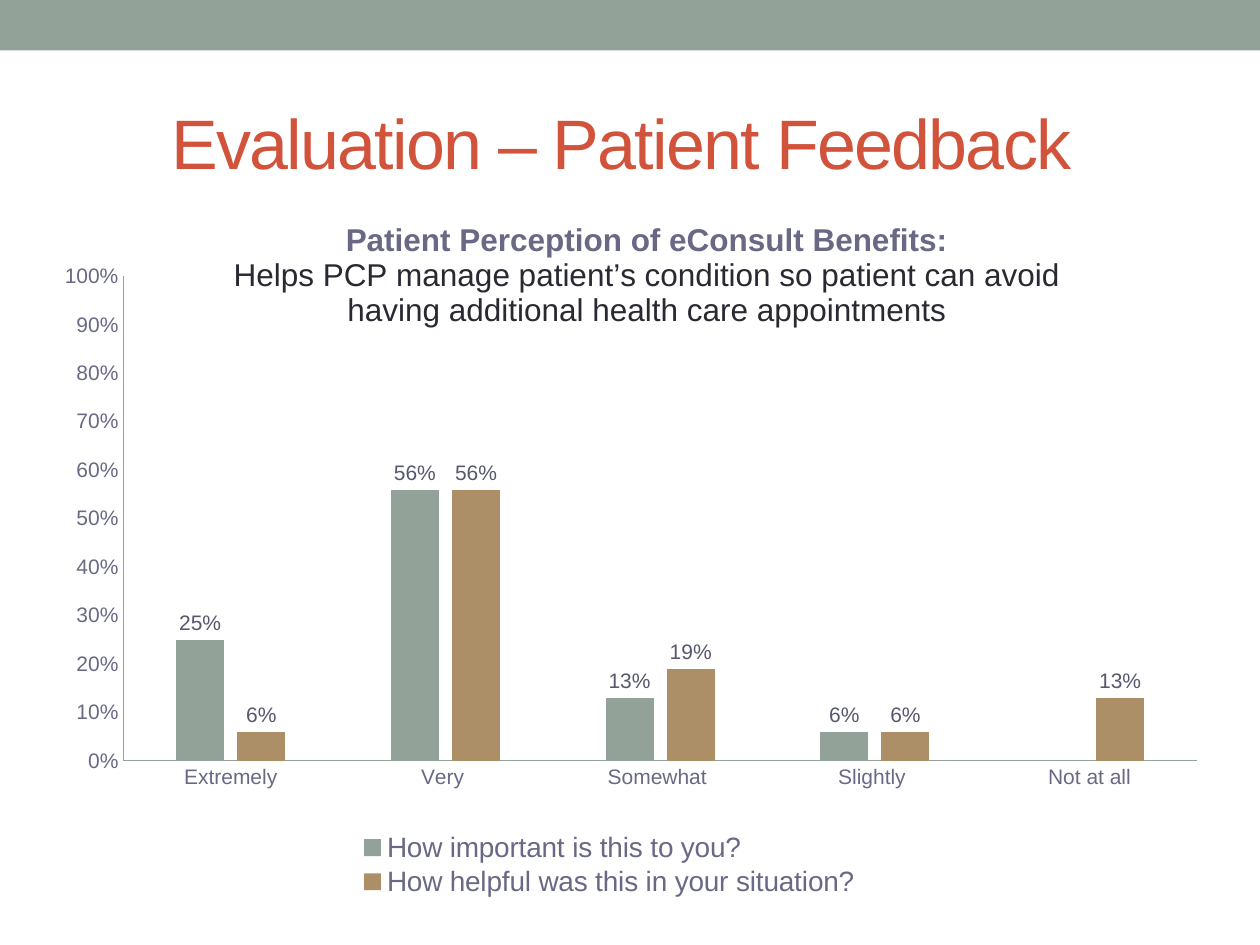
from lxml import etree
from pptx import Presentation
from pptx.chart.data import CategoryChartData
from pptx.dml.color import RGBColor
from pptx.enum.chart import XL_CHART_TYPE, XL_LABEL_POSITION, XL_LEGEND_POSITION, XL_TICK_MARK
from pptx.enum.shapes import MSO_SHAPE
from pptx.enum.text import MSO_ANCHOR, PP_ALIGN
from pptx.oxml.ns import qn
from pptx.util import Pt

COLUMNS = XL_CHART_TYPE.COLUMN_CLUSTERED
OUTSIDE_END = XL_LABEL_POSITION.OUTSIDE_END
BOTTOM = XL_LEGEND_POSITION.BOTTOM
NO_TICK = XL_TICK_MARK.NONE
RECTANGLE = MSO_SHAPE.RECTANGLE
MIDDLE = MSO_ANCHOR.MIDDLE
CENTER = PP_ALIGN.CENTER

FONT = "Arial"
COLORS = {
    "sage": "93A299",
    "tan": "AD8F67",
    "red": "D2533C",
    "ink": "292934",
    "slate": "696986",
    "label": "57576E",
}
CATEGORIES = ["Extremely", "Very ", "Somewhat ", "Slightly ", "Not at all"]
SERIES = [
    ("How important is this to you?", [0.25, 0.56, 0.13, 0.06, None], "sage"),
    ("How helpful was this in your situation?", [0.06, 0.56, 0.19, 0.06, 0.13], "tan"),
]


def rgb(name):
    return RGBColor.from_string(COLORS[name])


def style_font(font, size, color, bold=False):
    font.name = FONT
    font.size = Pt(size)
    font.bold = bold
    font.color.rgb = rgb(color)


def write(para, text, size, color, bold=False, spacing=None):
    """Add one centred run; spacing is in points."""
    para.alignment = CENTER
    span = para.add_run()
    span.text = text
    style_font(span.font, size, color, bold)
    if spacing is not None:
        span.font._element.set("spc", str(round(spacing * 100)))


def place(element, index, inner=False, **fractions):
    """Give a chart part a manual layout in fractions of the chart."""
    for old in element.findall(qn("c:layout")):
        element.remove(old)
    layout = etree.Element(qn("c:layout"))
    manual = etree.SubElement(layout, qn("c:manualLayout"))
    settings = {"layoutTarget": "inner"} if inner else {}
    settings.update(xMode="edge", yMode="edge", **fractions)
    for tag, value in settings.items():
        etree.SubElement(manual, qn(f"c:{tag}")).set("val", str(value))
    element.insert(index, layout)


def add_band(page, left, top, width, height):
    band = page.shapes.add_shape(RECTANGLE, Pt(left), Pt(top), Pt(width), Pt(height))
    band.shadow.inherit = False
    band.fill.solid()
    band.fill.fore_color.rgb = rgb("sage")
    band.line.fill.background()


def set_title(page, left, top, width, height):
    title = page.shapes.title
    title.left, title.top, title.width, title.height = map(Pt, (left, top, width, height))
    title.text_frame.vertical_anchor = MIDDLE
    write(title.text_frame.paragraphs[0], "Evaluation – Patient Feedback ",
          size=40, color="red", spacing=-1)


def format_axis(axis):
    axis.has_major_gridlines = False
    axis.major_tick_mark = axis.minor_tick_mark = NO_TICK
    axis.format.line.color.rgb = rgb("sage")
    axis.format.line.width = Pt(0.75)
    style_font(axis.tick_labels.font, 12, "slate")


def format_series(series, color):
    series.format.fill.solid()
    series.format.fill.fore_color.rgb = rgb(color)
    series.invert_if_negative = False
    labels = series.data_labels
    labels.show_value = True
    labels.position = OUTSIDE_END
    labels.number_format = "0%"
    labels.number_format_is_linked = False
    style_font(labels.font, 12, "label")


def format_chart_title(chart):
    chart.has_title = True
    title = chart.chart_title
    frame = title.text_frame
    write(frame.paragraphs[0], "Patient Perception of eConsult Benefits:",
          size=18, color="slate", bold=True)
    write(frame.add_paragraph(),
          "Helps PCP manage patient’s condition so patient can avoid "
          "having additional health care appointments",
          size=18, color="ink")
    place(title._element, 1, x=0.16, y=0.03)
    title._element.find(qn("c:overlay")).set("val", "1")


def format_legend(chart):
    chart.has_legend = True
    legend = chart.legend
    legend.position = BOTTOM
    legend.include_in_layout = False
    style_font(legend.font, 16, "slate")
    place(legend._element, 1, x=0.26, y=0.88, w=0.45, h=0.1)


def add_feedback_chart(page, left, top, width, height):
    data = CategoryChartData(number_format="0%")
    data.categories = CATEGORIES
    for name, values, _ in SERIES:
        data.add_series(name, values)
    chart = page.shapes.add_chart(
        COLUMNS, Pt(left), Pt(top), Pt(width), Pt(height), data).chart
    style_font(chart.font, 10, "ink")

    plot = chart.plots[0]
    plot.gap_width = 219
    plot.overlap = -27
    plot.vary_by_categories = False
    for series, (_, _, color) in zip(plot.series, SERIES):
        format_series(series, color)

    for axis in (chart.category_axis, chart.value_axis):
        format_axis(axis)
    scale = chart.value_axis
    scale.minimum_scale, scale.maximum_scale, scale.major_unit = 0, 1, 0.1
    scale.tick_labels.number_format = "0%"
    scale.tick_labels.number_format_is_linked = False

    format_chart_title(chart)
    format_legend(chart)
    plot_area = chart._chartSpace.find(f".//{qn('c:plotArea')}")
    place(plot_area, 0, inner=True, x=0.069, y=0.114, w=0.919, h=0.672)


def main():
    deck = Presentation()
    deck.slide_width, deck.slide_height = Pt(720), Pt(540)
    page = deck.slides.add_slide(deck.slide_layouts[5])
    add_band(page, 0, 0, 720, 28.8)
    set_title(page, 36, 42, 648, 78)
    add_feedback_chart(page, 24.5, 111, 667.5, 412)
    deck.save("out.pptx")


if __name__ == "__main__":
    main()
